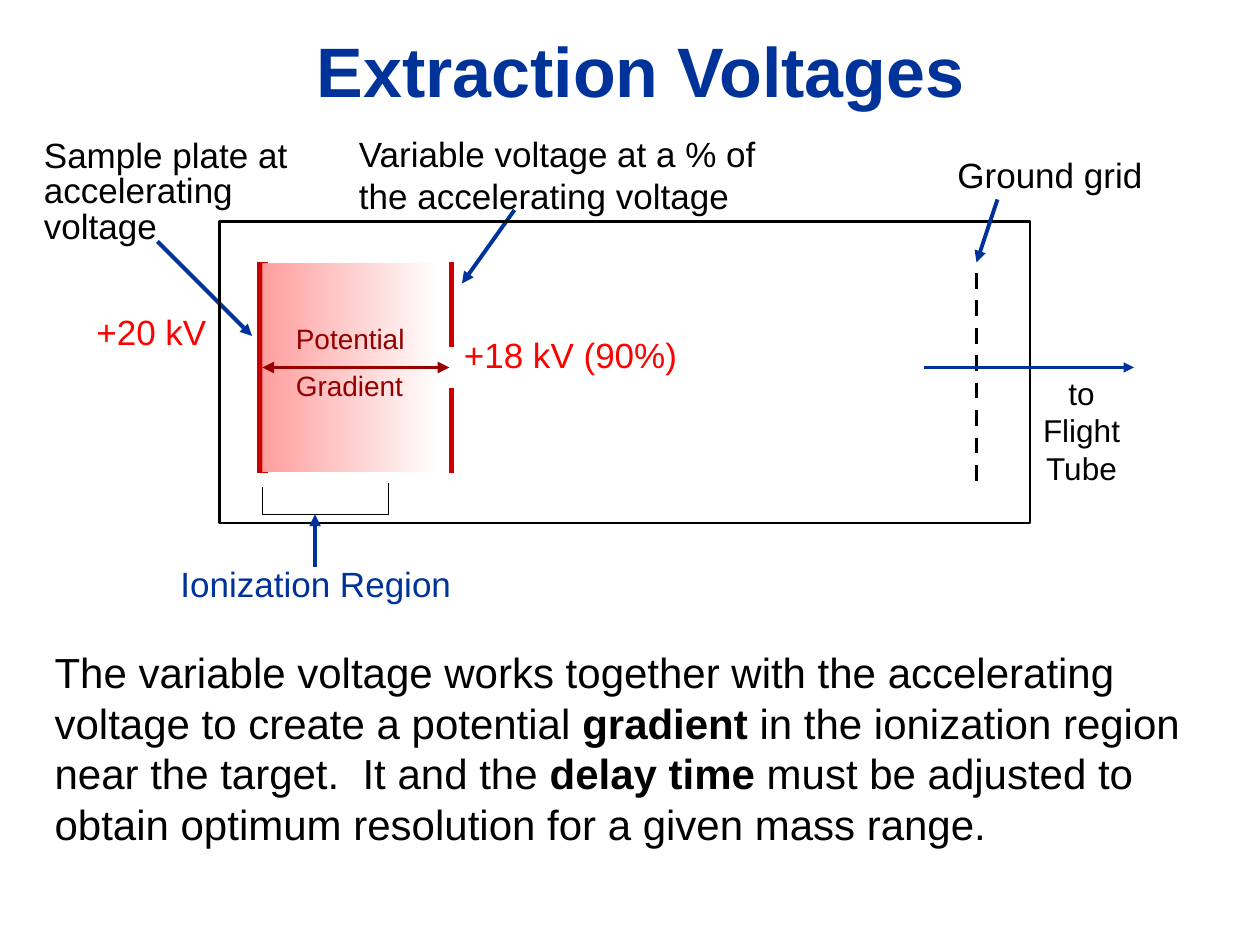
import pptx
import pptx.util
import pptx.dml.color
import pptx.enum.dml
import pptx.enum.shapes
import pptx.enum.text
import pptx.oxml.ns
import lxml.etree
import dataclasses

UNIT = 7620  # EMU in one px, 120 px to the inch


@dataclasses.dataclass(frozen=True)
class Theme:
    font: str = "Arial"
    ink: str = "000000"
    blue: str = "003399"
    red: str = "FF0000"
    plate: str = "CC0000"
    dark: str = "920000"
    arrow: str = "980000"
    glow: str = "FF9F9F"
    white: str = "FFFFFF"
    head: int = 40
    body: int = 24
    label: int = 20
    exit: int = 18
    small: int = 16


LOOK = Theme()


def emu(*nums):
    return [num * UNIT for num in nums]


def rgb(code):
    return pptx.dml.color.RGBColor.from_string(code)


def add_xml(parent, tag, **attrs):
    return lxml.etree.SubElement(parent, pptx.oxml.ns.qn(tag), attrs)


def style(frame, size, color, bold=False):
    """Format every run of a text frame."""
    frame.word_wrap = True
    frame.auto_size = pptx.enum.text.MSO_AUTO_SIZE.NONE
    frame.vertical_anchor = pptx.enum.text.MSO_ANCHOR.TOP
    for para in frame.paragraphs:
        for run in para.runs:
            font = run.font
            font.name = LOOK.font
            font.size = pptx.util.Pt(size)
            font.bold = bold
            font.color.rgb = rgb(color)


def add_label(slide, box, text, size=LOOK.label, color=LOOK.ink):
    frame = slide.shapes.add_textbox(*emu(*box)).text_frame
    frame.text = text
    style(frame, size, color)
    return frame


def add_line(slide, start, end, color, width, head=False, tail=False):
    kind = pptx.enum.shapes.MSO_CONNECTOR.STRAIGHT
    line = slide.shapes.add_connector(kind, *emu(*start, *end))
    line.line.color.rgb = rgb(color)
    line.line.width = pptx.util.Pt(width)
    stroke = line.line._get_or_add_ln()
    for tag, shown in (("a:headEnd", head), ("a:tailEnd", tail)):
        if shown:
            add_xml(stroke, tag, type="triangle")
    add_xml(line._element.spPr, "a:effectLst")
    return line


def outline(shape, width):
    shape.shadow.inherit = False
    shape.fill.background()
    shape.line.color.rgb = rgb(LOOK.ink)
    shape.line.width = pptx.util.Pt(width)


def add_rect(slide, box):
    kind = pptx.enum.shapes.MSO_SHAPE.RECTANGLE
    return slide.shapes.add_shape(kind, *emu(*box))


def place(shape, box):
    shape.left, shape.top, shape.width, shape.height = emu(*box)


def put_title(slide, box):
    title = slide.shapes.title
    place(title, box)
    title.text_frame.text = "Extraction Voltages"
    title.text_frame.paragraphs[0].alignment = pptx.enum.text.PP_ALIGN.CENTER
    style(title.text_frame, LOOK.head, LOOK.blue, True)


def put_body(slide, box):
    body = slide.placeholders[1]
    place(body, box)
    para = body.text_frame.paragraphs[0]
    props = para._p.get_or_add_pPr()
    props.set("marL", "0")
    props.set("indent", "0")
    add_xml(props, "a:buNone")
    para.space_before = pptx.util.Pt(0)
    parts = (
        "The variable voltage works together with the accelerating voltage "
        "to create a potential ",
        "gradient",
        " in the ionization region near the target.  It and the ",
        "delay time",
        " must be adjusted to obtain optimum resolution for a given mass range.",
    )
    for part in parts:
        para.add_run().text = part
    style(body.text_frame, LOOK.body, LOOK.ink)
    for run in para.runs[1::2]:
        run.font.bold = True


def draw_field(slide, box):
    """Sample plate, potential gradient and the split extraction plate."""
    x, y, w, h = box
    right, mid, base = x + w, y + h // 2, y + h
    # Plates, with a gap of 40 px in the second
    add_line(slide, (x, y), (x, base), LOOK.plate, 6)
    for top, end in ((y, mid - 20), (mid + 20, base)):
        add_line(slide, (right, top), (right, end), LOOK.plate, 3)
    # Shaded field
    field = add_rect(slide, (x, y, w - 10, h))
    field.shadow.inherit = False
    field.line.fill.background()
    field.fill.gradient()
    field.fill.gradient_angle = 0
    for stop, color in zip(field.fill.gradient_stops, (LOOK.glow, LOOK.white)):
        stop.color.rgb = rgb(color)
    # Gradient text and arrow
    frame = add_label(slide, (x + 20, mid - 50, 148, 92),
                      "Potential\nGradient", LOOK.small, LOOK.dark)
    frame.paragraphs[1].space_before = pptx.util.Pt(8)
    span = add_line(slide, (x, mid), (right - 2, mid), LOOK.arrow, 2.25, True, True)
    span.begin_connect(field, 1)
    # Voltages
    add_label(slide, (x - 170, y + 40, 130, 52), "+20 kV", color=LOOK.red)
    add_label(slide, (right, y + 62, 300, 52), "+18 kV (90%)", color=LOOK.red)
    # Callouts
    note = add_label(slide, (x - 220, y - 123, 277, 114),
                     "Sample plate at accelerating voltage")
    note.paragraphs[0].line_spacing = 0.85
    add_label(slide, (x + 80, y - 130, 440, 92),
              "Variable voltage at a % of the accelerating voltage")
    add_line(slide, (x - 100, y - 20), (x - 10, y + 70), LOOK.blue, 2.25, tail=True)
    add_line(slide, (x + 240, y - 50), (right + 10, y + 20), LOOK.blue, 2.25, tail=True)


def draw_region(slide, box):
    """Bracket under the field, with its name."""
    x, y, w, h = box
    base = y + h
    path = slide.shapes.build_freeform(*emu(x, y + 4))
    points = ((x, base), (x + w, base), (x + w, y))
    path.add_line_segments([emu(*point) for point in points], close=False)
    outline(path.convert_to_shape(), 0.75)
    add_label(slide, (x - 90, base + 40, 350, 52), "Ionization Region", color=LOOK.blue)
    add_line(slide, (x + 50, base + 50), (x + 50, base), LOOK.blue, 2.25, tail=True)


def draw_exit(slide, box):
    """Ground grid and the way out to the flight tube."""
    x, y, w, h = box
    grid = add_line(slide, (x + 50, y), (x + 50, y + h), LOOK.ink, 2.25)
    grid.line.dash_style = pptx.enum.dml.MSO_LINE.DASH
    add_label(slide, (x + 20, y - 120, 220, 52), "Ground grid")
    add_line(slide, (x + 70, y - 70), (x + 50, y - 10), LOOK.blue, 2.25, tail=True)
    frame = add_label(slide, (x + 100, y + 90, 100, 120), "to Flight Tube", LOOK.exit)
    frame.paragraphs[0].alignment = pptx.enum.text.PP_ALIGN.CENTER
    add_line(slide, (x, y + 90), (x + w, y + 90), LOOK.blue, 1.5, tail=True)


def main():
    deck = pptx.Presentation()
    deck.slide_width, deck.slide_height = emu(1200, 900)
    slide = deck.slides.add_slide(deck.slide_layouts[1])
    put_title(slide, (130, 20, 960, 92))
    draw_field(slide, (250, 250, 180, 200))
    outline(add_rect(slide, (209, 211, 772, 287)), 1.5)  # chamber
    draw_region(slide, (250, 460, 120, 30))
    draw_exit(slide, (880, 260, 200, 203))
    put_body(slide, (40, 610, 1120, 204))
    deck.save("out.pptx")


if __name__ == "__main__":
    main()
